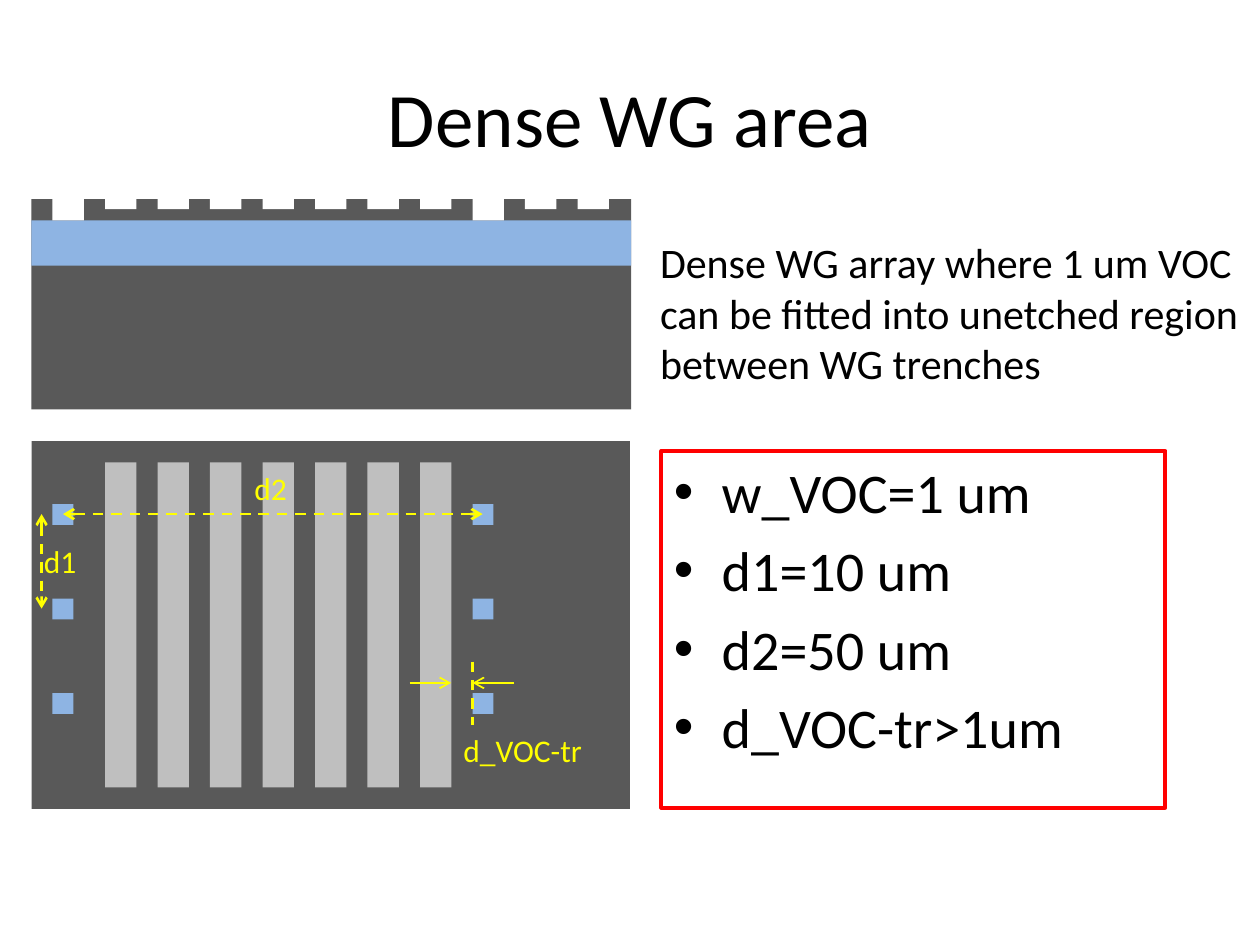
import pptx
import pptx.util
import pptx.dml.color
import pptx.enum.dml
import pptx.enum.shapes
import pptx.enum.text
import pptx.oxml.ns
from lxml import etree

Inches, Pt = pptx.util.Inches, pptx.util.Pt
ALIGN, ANCHOR = pptx.enum.text.PP_ALIGN, pptx.enum.text.MSO_ANCHOR

SILICON, OXIDE, TRENCH = "595959", "8EB4E3", "BFBFBF"
WHITE, BLACK, YELLOW, RED = "FFFFFF", "000000", "FFFF00", "FF0000"

RULES = ["w_VOC=1 um", "d1=10 um", "d2=50 um", "d_VOC-tr>1um"]
NOTE = ("Dense WG array where 1 um VOC \n"
        "can be fitted into unetched region\n"
        "between WG trenches")

# text, box, size, colour, wrap
LABELS = [
    ("d1", (0.25, 4.25, 0.46, 0.4), 18, YELLOW),
    ("d2", (1.92, 3.67, 0.46, 0.4), 18, YELLOW),
    ("d_VOC-tr", (3.58, 5.75, 1.15, 0.4), 18, YELLOW),
    (NOTE, (5.14, 1.83, 4.86, 1.31), 24, BLACK),
]

# start, end, width, dashed, arrowheads
DIMENSIONS = [
    ((0.33, 4.08), (0.33, 4.83), 1.5, True, ("headEnd", "tailEnd")),
    ((0.5, 4.08), (3.83, 4.08), 1.5, True, ("headEnd", "tailEnd")),
    ((3.75, 5.25), (3.75, 5.75), 1.5, True, ()),
    ((3.25, 5.42), (3.58, 5.42), 1, False, ("tailEnd",)),
    ((4.08, 5.42), (3.75, 5.42), 1, False, ("tailEnd",)),
]

PITCH = 5 / 12          # spacing of the etched slots, also the first slot's left
SLOT_W = 0.25
SLOTS = 11
VOC_SLOTS = (0, 8)      # slots etched through to the oxide
VOC_ROWS = (4, 4.75, 5.5)
VOC_SIZE = 1 / 6


def rgb(value):
    return pptx.dml.color.RGBColor.from_string(value)


def sub(parent, tag, **attrs):
    return etree.SubElement(parent, pptx.oxml.ns.qn(tag), attrs)


def add_rect(s, box, color):
    sp = s.shapes.add_shape(pptx.enum.shapes.MSO_SHAPE.RECTANGLE, *map(Inches, box))
    sp.shadow.inherit = False
    sp.fill.solid()
    sp.fill.fore_color.rgb = rgb(color)
    sp.line.fill.background()


def add_text(s, lines, box, size, color=BLACK, **frame):
    """Add a text box with one paragraph for each line; return its shape."""
    sp = s.shapes.add_textbox(*map(Inches, box))
    tf = sp.text_frame
    for name, value in frame.items():
        setattr(tf, name, value)
    for i, line in enumerate(lines):
        p = tf.add_paragraph() if i else tf.paragraphs[0]
        p.text = line.replace("\n", "\v")
        for r in p.runs:
            for name, value in {"name": "Calibri", "size": Pt(size)}.items():
                setattr(r.font, name, value)
            r.font.color.rgb = rgb(color)
    return sp


def add_dimension(s, start, end, width, dashed, heads):
    line = s.shapes.add_connector(pptx.enum.shapes.MSO_CONNECTOR.STRAIGHT,
                                  *map(Inches, start + end))
    line.line.color.rgb = rgb(YELLOW)
    line.line.width = Pt(width)
    if dashed:
        line.line.dash_style = pptx.enum.dml.MSO_LINE.DASH
    ln = line.line._get_or_add_ln()
    for head in heads:
        sub(ln, "a:" + head, type="arrow")
    sub(line._element.spPr, "a:effectLst")


def draw_cross_section(s):
    add_rect(s, (0.25, 1.58, 4.76, 1.67), SILICON)
    add_rect(s, (0.25, 1.75, 4.76, 0.36), OXIDE)
    for i in range(SLOTS):
        depth = 0.17 if i in VOC_SLOTS else 0.08
        add_rect(s, (PITCH * (i + 1), 1.58, SLOT_W, depth), WHITE)


def draw_top_view(s):
    add_rect(s, (0.25, 3.5, 4.75, 2.92), SILICON)
    first, last = VOC_SLOTS
    for i in range(first + 1, last):
        add_rect(s, (PITCH * (i + 1), 3.67, SLOT_W, 2.58), TRENCH)
    for top in VOC_ROWS:
        for i in VOC_SLOTS:
            add_rect(s, (PITCH * (i + 1), top, VOC_SIZE, VOC_SIZE), OXIDE)


def draw_rules(s):
    sp = add_text(s, RULES, (5.25, 3.58, 4, 2.83), 32, word_wrap=True)
    sp.line.color.rgb = rgb(RED)
    sp.line.width = Pt(2.25)
    indent = Inches(0.38)
    for p in sp.text_frame.paragraphs:
        p.space_before = Pt(6.4)
        pPr = p._p.get_or_add_pPr()
        pPr.set("marL", str(indent))
        pPr.set("indent", str(-indent))
        sub(pPr, "a:buFont", typeface="Arial")
        sub(pPr, "a:buChar", char="•")


def main():
    prs = pptx.Presentation()
    prs.slide_width, prs.slide_height = Inches(10), Inches(7.5)
    s = prs.slides.add_slide(prs.slide_layouts[6])

    title = add_text(s, ["Dense WG area"], (0.5, 0.3, 9, 1.25), 44,
                     word_wrap=True, vertical_anchor=ANCHOR.MIDDLE)
    title.text_frame.paragraphs[0].alignment = ALIGN.CENTER
    draw_rules(s)
    draw_cross_section(s)
    draw_top_view(s)
    for dimension in DIMENSIONS:
        add_dimension(s, *dimension)
    for text, box, size, color in LABELS:
        add_text(s, [text], box, size, color, word_wrap=False)

    prs.save("out.pptx")


if __name__ == "__main__":
    main()
